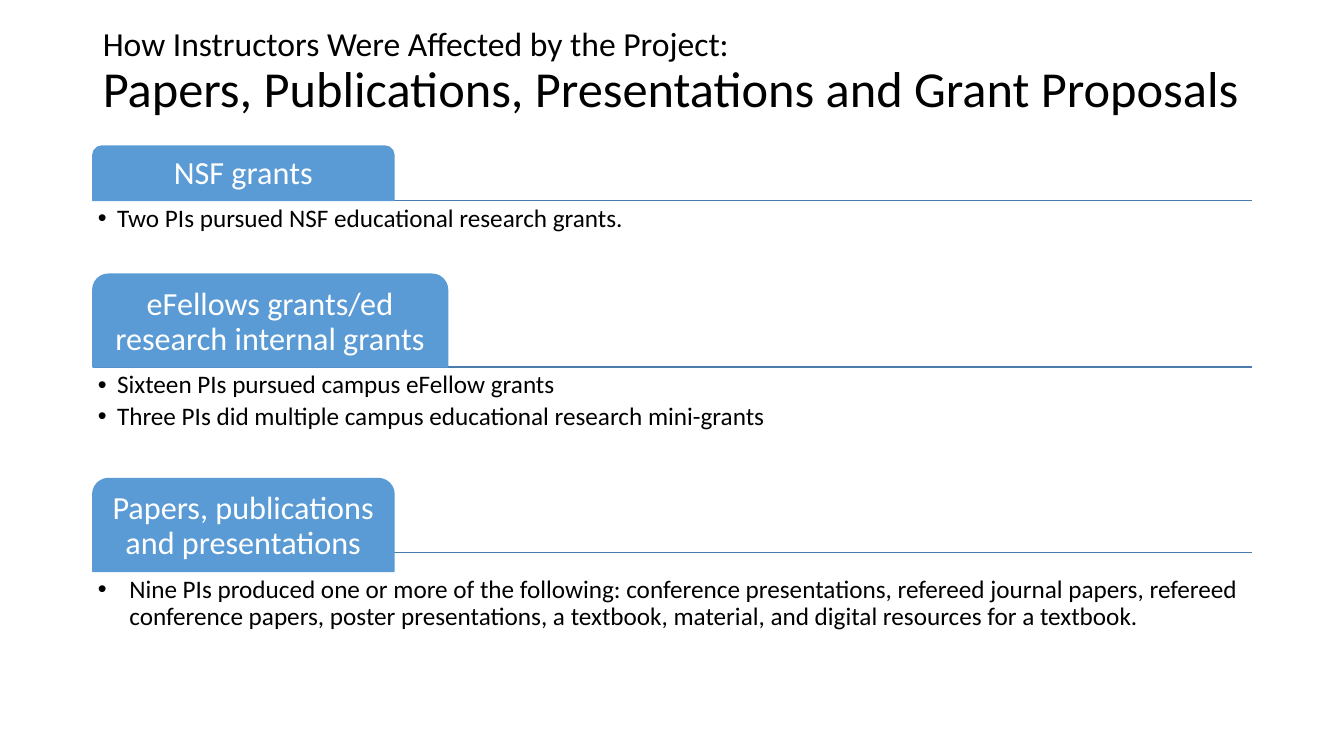
from dataclasses import dataclass

from lxml import etree
from pptx import Presentation
from pptx.dml.color import RGBColor
from pptx.enum import shapes, text
from pptx.oxml import ns
from pptx.util import Cm, Pt


@dataclass(frozen=True)
class Theme:
    font: str = "Calibri"
    black: RGBColor = RGBColor.from_string("000000")
    white: RGBColor = RGBColor.from_string("FFFFFF")
    tab: RGBColor = RGBColor.from_string("5B9BD5")
    rule: RGBColor = RGBColor.from_string("497CAB")
    overline: Pt = Pt(24)
    headline: Pt = Pt(36)
    label: Pt = Pt(23)
    body: Pt = Pt(18)


theme = Theme()
LEFT, WIDTH = Cm(2.34), Cm(29.21)
BODY_HEIGHT = Cm(2.74)
CORNER = 0.167

# Tab label, tab top, tab width, tab height, rule height, bullet indent, bullets
sections = [
    ("NSF grants", Cm(3.68), Cm(7.59), Cm(1.37), Cm(5.05), Cm(0.48),
     ["Two PIs pursued NSF educational research grants."]),
    ("eFellows grants/ed research internal grants",
     Cm(6.91), Cm(8.94), Cm(2.34), Cm(9.25), Cm(0.48),
     ["Sixteen PIs pursued campus eFellow grants",
      "Three PIs did multiple campus educational research mini-grants"]),
    ("Papers, publications and presentations",
     Cm(12.06), Cm(7.59), Cm(2.34), Cm(13.92), Cm(0.79),
     ["Nine PIs produced one or more of the following: conference "
      "presentations, refereed journal papers, refereed conference papers, "
      "poster presentations, a textbook, material, and digital resources "
      "for a textbook."]),
]


def format_frame(frame, anchor, left, top, right, bottom):
    values = {
        "word_wrap": True, "auto_size": text.MSO_AUTO_SIZE.NONE,
        "vertical_anchor": anchor, "margin_left": left, "margin_top": top,
        "margin_right": right, "margin_bottom": bottom,
    }
    for name, value in values.items():
        setattr(frame, name, value)


def add_run(paragraph, words, size, color, alignment=text.PP_ALIGN.LEFT):
    paragraph.alignment = alignment
    paragraph.line_spacing = 0.9
    run = paragraph.add_run()
    run.text = words
    for name, value in {"name": theme.font, "size": size}.items():
        setattr(run.font, name, value)
    run.font.color.rgb = color


presentation = Presentation()
presentation.slide_width, presentation.slide_height = Cm(33.87), Cm(19.05)
slide = presentation.slides.add_slide(presentation.slide_layouts[5])

title = slide.shapes.title
title.left, title.top, title.width, title.height = LEFT, Cm(0), WIDTH, Cm(3.68)
format_frame(title.text_frame, text.MSO_ANCHOR.MIDDLE,
             Cm(0.25), Cm(0.13), Cm(0), Cm(0.13))
heading = title.text_frame.paragraphs[0]
add_run(heading, "How Instructors Were Affected by the Project: ",
        theme.overline, theme.black)
heading.add_line_break()
add_run(heading, "Papers, Publications, Presentations and Grant Proposals",
        theme.headline, theme.black)

for label, top, width, height, rule_y, indent, bullets in sections:
    rule = slide.shapes.add_connector(
        shapes.MSO_CONNECTOR.STRAIGHT, LEFT, rule_y, LEFT + WIDTH, rule_y)
    rule.line.color.rgb = theme.rule
    rule.line.width = Pt(1)
    etree.SubElement(rule.line._get_or_add_ln().getparent(),
                     ns.qn("a:effectLst"))

    tab = slide.shapes.add_shape(
        shapes.MSO_SHAPE.ROUND_2_SAME_RECTANGLE, LEFT, top, width, height)
    tab.adjustments[0] = CORNER
    tab.shadow.inherit = False
    tab.fill.solid()
    tab.fill.fore_color.rgb = theme.tab
    tab.line.color.rgb = theme.tab
    tab.line.width = Pt(1)
    format_frame(tab.text_frame, text.MSO_ANCHOR.MIDDLE,
                 Cm(0.1), Cm(0.1), Cm(0.1), Cm(0.13))
    add_run(tab.text_frame.paragraphs[0], label, theme.label, theme.white,
            text.PP_ALIGN.CENTER)

    body = slide.shapes.add_textbox(LEFT, top + height, WIDTH, BODY_HEIGHT)
    frame = body.text_frame
    format_frame(frame, text.MSO_ANCHOR.TOP, *[Cm(0.13)] * 4)
    for number, words in enumerate(bullets):
        paragraph = frame.add_paragraph() if number else frame.paragraphs[0]
        add_run(paragraph, words, theme.body, theme.black)
        paragraph.space_after = Pt(3)
        properties = paragraph._p.get_or_add_pPr()
        properties.set("marL", str(indent))
        properties.set("indent", str(-indent))
        etree.SubElement(properties, ns.qn("a:buFont"), typeface="Arial")
        etree.SubElement(properties, ns.qn("a:buChar"), char="•")

presentation.save("out.pptx")
